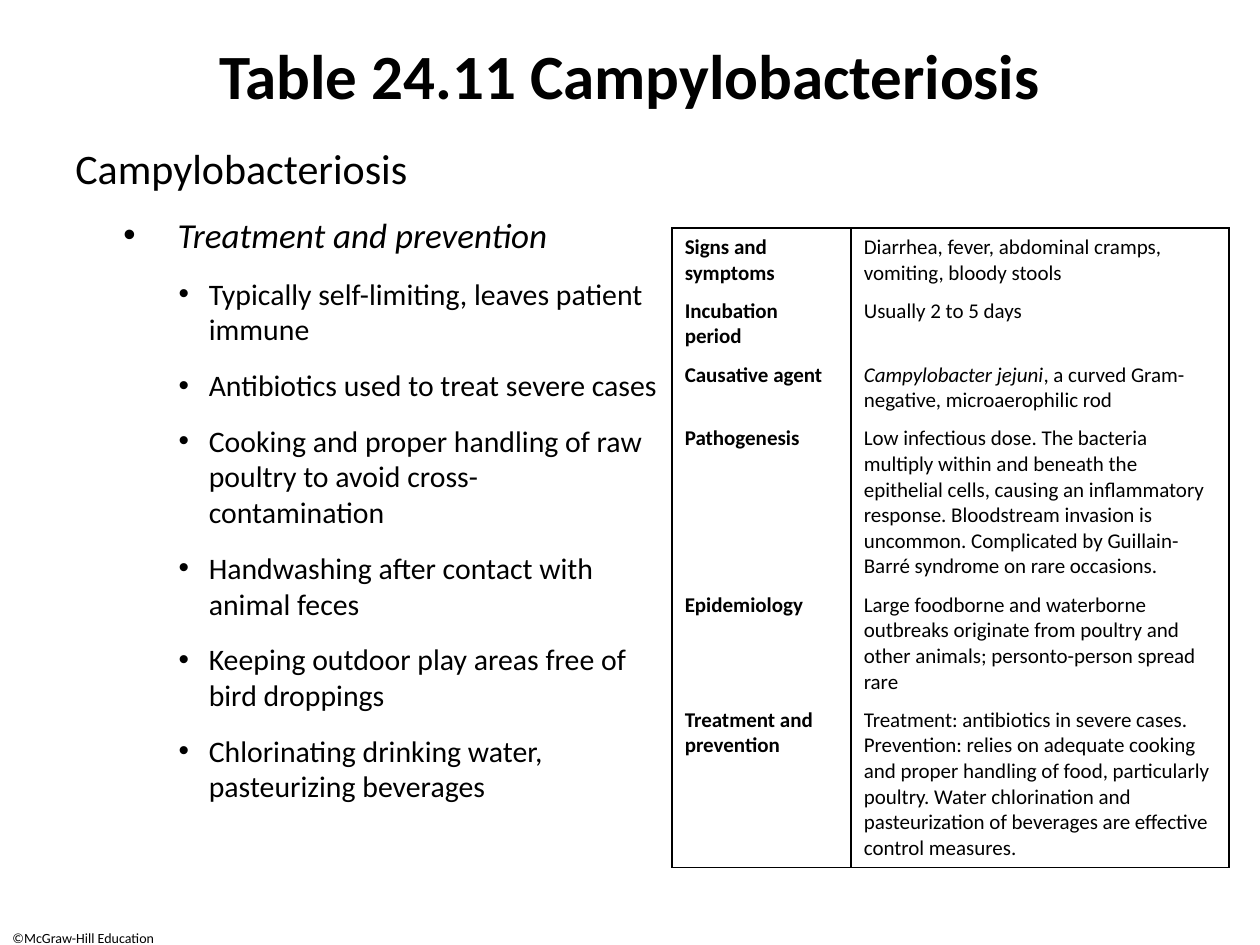
from dataclasses import dataclass

from lxml import etree
from pptx import Presentation
from pptx.dml.color import RGBColor
from pptx.enum.text import MSO_ANCHOR, MSO_AUTO_SIZE, PP_ALIGN
from pptx.oxml.ns import qn
from pptx.util import Cm, Pt

CENTER = PP_ALIGN.CENTER
TOP, MIDDLE = MSO_ANCHOR.TOP, MSO_ANCHOR.MIDDLE
NO_FIT = MSO_AUTO_SIZE.NONE
TITLE_ONLY = 5


@dataclass(frozen=True)
class Theme:
    """Colours, font and type sizes of the slide."""
    font: str = "Calibri"
    ink: str = "000000"
    title: float = 36
    levels: tuple = (24, 20, 17)
    table: float = 12
    footer: float = 8
    border: float = 1
    space_after: float = 8


THEME = Theme()
INDENTS = ((0, 0), (2.06, -1.09), (2.69, -0.61))
OUTLINE = [
    (0, "Campylobacteriosis"),
    (1, "Treatment and prevention"),
    (2, "Typically self-limiting, leaves patient immune"),
    (2, "Antibiotics used to treat severe cases"),
    (2, "Cooking and proper handling of raw poultry to avoid cross-\ncontamination"),
    (2, "Handwashing after contact with animal feces"),
    (2, "Keeping outdoor play areas free of bird droppings"),
    (2, "Chlorinating drinking water, pasteurizing beverages"),
]
FACTS = [
    ("Signs and symptoms", 2,
     [("Diarrhea, fever, abdominal cramps, vomiting, bloody stools", False)]),
    ("Incubation period", 2, [("Usually 2 to 5 days", False)]),
    ("Causative agent", 2,
     [("Campylobacter jejuni", True),
      (", a curved Gram-negative, microaerophilic rod", False)]),
    ("Pathogenesis", 6,
     [("Low infectious dose. The bacteria multiply within and beneath the "
       "epithelial cells, causing an inflammatory response. Bloodstream "
       "invasion is uncommon. Complicated by Guillain-Barré syndrome on rare "
       "occasions.", False)]),
    ("Epidemiology", 4,
     [("Large foodborne and waterborne outbreaks originate from poultry and "
       "other animals; personto-person spread rare", False)]),
    ("Treatment and prevention", 6,
     [("Treatment: antibiotics in severe cases. Prevention: relies on adequate "
       "cooking and proper handling of food, particularly poultry. Water "
       "chlorination and pasteurization of beverages are effective control "
       "measures.", False)]),
]


def add_run(p, text, size, bold=False, italic=False):
    """Add one formatted run to a paragraph."""
    r = p.add_run()
    r.text = text
    r.font.name, r.font.size = THEME.font, Pt(size)
    r.font.bold, r.font.italic = bold, italic
    r.font.color.rgb = RGBColor.from_string(THEME.ink)


def add_text_box(s, box):
    """Add a wrapping, top-anchored text box and return its frame."""
    tf = s.shapes.add_textbox(*map(Cm, box)).text_frame
    tf.word_wrap, tf.auto_size, tf.vertical_anchor = True, NO_FIT, TOP
    return tf


def set_title(s, box, text):
    """Place and fill the title placeholder."""
    sp = s.shapes.title
    sp.left, sp.top, sp.width, sp.height = map(Cm, box)
    tf = sp.text_frame
    tf.auto_size, tf.vertical_anchor = NO_FIT, MIDDLE
    p = tf.paragraphs[0]
    p.alignment = CENTER
    add_run(p, text, THEME.title, bold=True)


def set_bullet(p, level):
    """Indent a paragraph for its level and give it a round bullet."""
    margin, hanging = INDENTS[level]
    pPr = p._p.get_or_add_pPr()
    pPr.set("marL", str(Cm(margin)))
    pPr.set("indent", str(Cm(hanging)))
    etree.SubElement(pPr, qn("a:buFont")).set("typeface", "Arial")
    etree.SubElement(pPr, qn("a:buChar")).set("char", "•")


def add_outline(s, box, items):
    """Add the heading and its two levels of bullets."""
    tf = add_text_box(s, box)
    for i, (level, text) in enumerate(items):
        p = tf.add_paragraph() if i else tf.paragraphs[0]
        size = THEME.levels[level]
        if level:
            set_bullet(p, level)
            p.level = level
        p.space_before = Pt(0.2 * size if i else 0)
        p.space_after = Pt(THEME.space_after)
        for n, line in enumerate(text.split("\n")):
            if n:
                p.add_line_break()
            add_run(p, line, size, italic=level == 1)


def set_borders(cell, visible):
    """Draw the named sides of a cell and clear the others."""
    tcPr = cell._tc.get_or_add_tcPr()
    for i, side in enumerate("LRTB"):
        ln = etree.Element(qn(f"a:ln{side}"), w=str(Pt(THEME.border)))
        if side in visible:
            fill = etree.SubElement(ln, qn("a:solidFill"))
            etree.SubElement(fill, qn("a:srgbClr")).set("val", THEME.ink)
        else:
            etree.SubElement(ln, qn("a:noFill"))
        tcPr.insert(i, ln)


def add_fact_table(s, box, label_width, facts):
    """Add the two-column fact table, each row sized by its line count."""
    left, top, width, height = box
    table = s.shapes.add_table(len(facts), 2, *map(Cm, box)).table
    table.first_row = table.horz_banding = False
    table.columns[0].width = Cm(label_width)
    table.columns[1].width = Cm(width - label_width)
    padding = 0.25
    line = (height - padding * len(facts)) / sum(n for _, n, _ in facts)
    last = len(facts) - 1
    for i, (label, lines, parts) in enumerate(facts):
        table.rows[i].height = Cm(lines * line + padding)
        sides = "LR" + ("T" if i == 0 else "") + ("B" if i == last else "")
        name, detail = table.cell(i, 0), table.cell(i, 1)
        add_run(name.text_frame.paragraphs[0], label, THEME.table, bold=True)
        for text, italic in parts:
            add_run(detail.text_frame.paragraphs[0], text, THEME.table, italic=italic)
        for cell in (name, detail):
            cell.fill.background()
            set_borders(cell, sides)


def add_footer(s, box, text):
    """Add the small copyright line."""
    tf = add_text_box(s, box)
    tf.word_wrap = False
    add_run(tf.paragraphs[0], text, THEME.footer)


def main():
    """Build the slide and save it."""
    prs = Presentation()
    prs.slide_width, prs.slide_height = Cm(25.4), Cm(19.05)
    s = prs.slides.add_slide(prs.slide_layouts[TITLE_ONLY])
    add_footer(s, (0, 18.62, 3.81, 0.43), "©McGraw-Hill Education")
    set_title(s, (4.02, 0.64, 17.35, 1.7), "Table 24.11 Campylobacteriosis")
    add_outline(s, (1.27, 2.74, 12.28, 14.05), OUTLINE)
    add_fact_table(s, (13.55, 4.6, 11.23, 12.88), 3.61, FACTS)
    prs.save("out.pptx")


if __name__ == "__main__":
    main()
